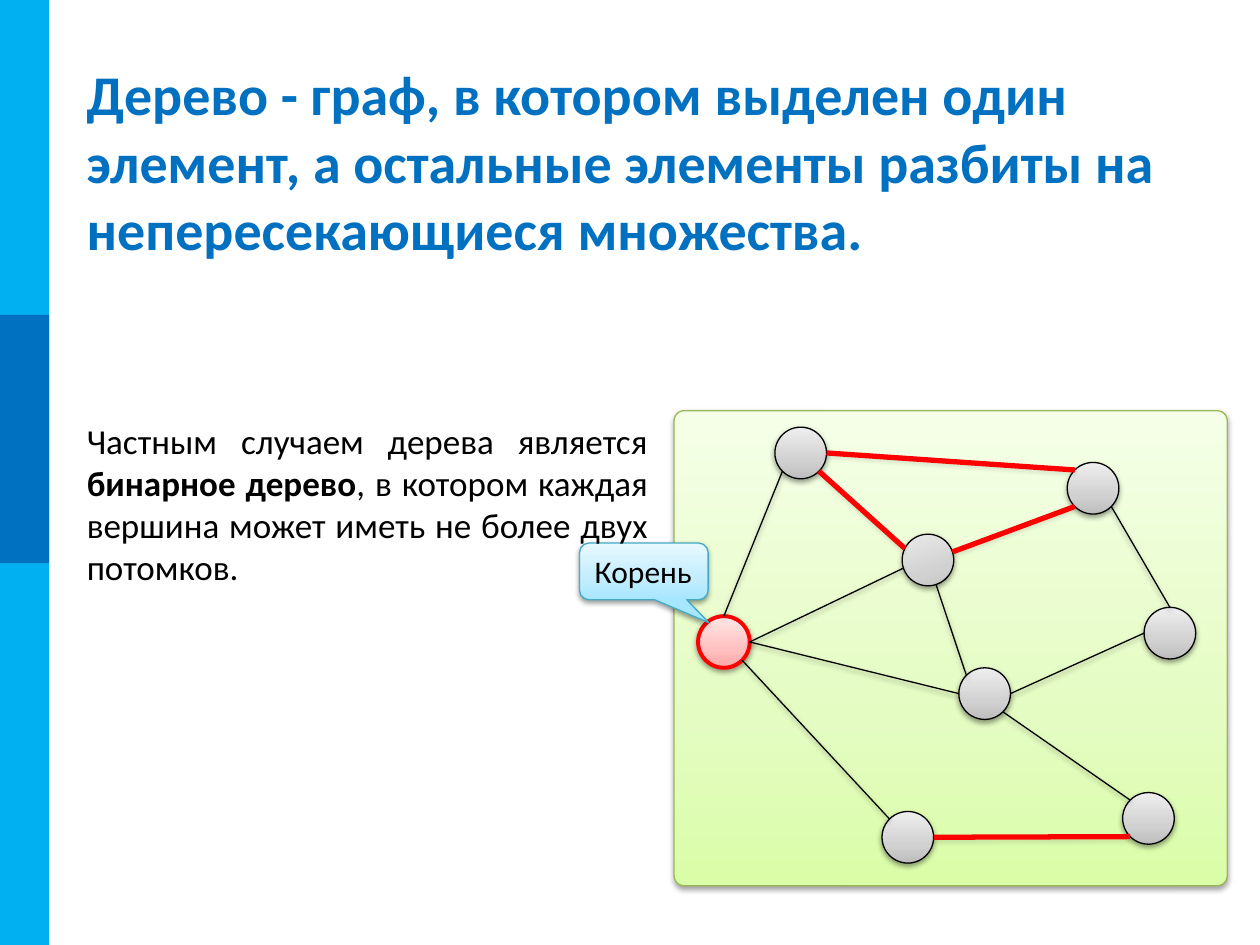
from math import cos, radians, sin

from lxml import etree
from pptx import Presentation
from pptx.dml.color import RGBColor
from pptx.enum.shapes import MSO_CONNECTOR, MSO_SHAPE
from pptx.enum.text import MSO_ANCHOR, MSO_AUTO_SIZE, PP_ALIGN
from pptx.oxml.ns import qn
from pptx.util import Inches, Pt

RECTANGLE, ROUNDED = MSO_SHAPE.RECTANGLE, MSO_SHAPE.ROUNDED_RECTANGLE
CIRCLE, CALLOUT = MSO_SHAPE.OVAL, MSO_SHAPE.ROUNDED_RECTANGULAR_CALLOUT
STRAIGHT = MSO_CONNECTOR.STRAIGHT
TOP, MIDDLE = MSO_ANCHOR.TOP, MSO_ANCHOR.MIDDLE
LEFT, JUSTIFY = PP_ALIGN.LEFT, PP_ALIGN.JUSTIFY
GROW, FIXED = MSO_AUTO_SIZE.SHAPE_TO_FIT_TEXT, MSO_AUTO_SIZE.NONE

# Content: each text is a list of (words, bold)
TITLE = [("Дерево - граф, в котором выделен один элемент, а остальные элементы "
          "разбиты на непересекающиеся множества.", True)]
BODY = [("Частным случаем дерева является ", False),
        ("бинарное дерево", True),
        (", в котором каждая вершина может иметь не более двух потомков.", False)]
ROOT_LABEL = [("Корень", False)]

# Side bars: top, height, colour
BARS = [(0, 7.5, "00B0F0"), (2.5, 1.97, "0070C0")]

# Gradients from bottom to top
GREEN = ("DAFDA7", "E4FCC2", "F5FFE7")
GREY = ("BDBDBD", "D1D1D1", "EEEEEE")
PINK = ("FFA6A5", "FFC0BF", "FFE7E7")
BLUE = ("A7E6FF", "C1EDFF", "E7F8FF")
STOPS = (0, 35, 100)

# Graph nodes: left, top, rotation
DIAMETER = 0.41
NODES = {
    "upper left": (6.15, 3.39, 0),
    "upper right": (8.47, 3.67, 0),
    "centre": (7.16, 4.24, -18.3),
    "lower centre": (7.61, 5.3, 0),
    "bottom": (7, 6.44, 0),
    "right": (9.08, 4.82, 0),
    "lower right": (8.91, 6.29, 0),
    "root": (5.54, 4.89, 0),
}
# Points on a circle, in degrees clockwise from its right
E, SE, S, SW, W, NW, N = 0, 45, 90, 135, 180, 225, 270
EDGES = [
    ("root", N, "upper left", SW),
    ("root", SE, "bottom", NW),
    ("right", W, "lower centre", E),
    ("lower right", NW, "lower centre", SE),
    ("lower centre", W, "root", E),
    ("root", E, "centre", W),
    ("right", N, "upper right", SE),
    ("lower centre", NW, "centre", S),
]
RED_EDGES = [
    ("centre", NW, "upper left", SE),
    ("upper right", SW, "centre", E),
    ("upper left", E, "upper right", NW),
    ("bottom", E, "lower right", SW),
]

deck = Presentation()
deck.slide_width, deck.slide_height = Inches(10), Inches(7.5)
page = deck.slides.add_slide(deck.slide_layouts[6])


def color(value):
    return RGBColor.from_string(value)


def add_effects(item, shadow):
    """Give a shape or connector a soft shadow, or none at all."""
    properties = item._element.spPr
    effects = properties.find(qn("a:effectLst"))
    if effects is None:
        effects = etree.SubElement(properties, qn("a:effectLst"))
    if shadow:
        outer = etree.SubElement(effects, qn("a:outerShdw"), blurRad=str(Pt(3.1)),
                                 dist=str(Pt(1.6)), dir="5400000", rotWithShape="0")
        black = etree.SubElement(outer, qn("a:srgbClr"), val="000000")
        etree.SubElement(black, qn("a:alpha"), val="38000")


def add_shape(kind, left, top, width, height, fill, line=None, weight=0.75):
    shape = page.shapes.add_shape(kind, *map(Inches, (left, top, width, height)))
    shape.shadow.inherit = False
    if isinstance(fill, str):
        shape.fill.solid()
        shape.fill.fore_color.rgb = color(fill)
    else:
        shape.fill.gradient()
        shape.fill.gradient_angle = 90
        stops = shape._element.spPr.find(qn("a:gradFill")).find(qn("a:gsLst"))
        for stop in list(stops):
            stops.remove(stop)
        for position, value in zip(STOPS, fill):
            stop = etree.SubElement(stops, qn("a:gs"), pos=str(position * 1000))
            etree.SubElement(stop, qn("a:srgbClr"), val=value)
    if line:
        shape.line.color.rgb = color(line)
        shape.line.width = Pt(weight)
        add_effects(shape, True)
    else:
        shape.line.fill.background()
    return shape


def write(box, spans, size, hue="000000", align=LEFT, anchor=TOP, wrap=True, fit=FIXED):
    frame = box.text_frame
    frame.word_wrap, frame.auto_size, frame.vertical_anchor = wrap, fit, anchor
    para = frame.paragraphs[0]
    para.alignment = align
    for words, bold in spans:
        span = para.add_run()
        span.text = words
        span.font.name, span.font.size, span.font.bold = "Calibri", Pt(size), bold
        span.font.color.rgb = color(hue)


def add_text(left, top, width, height, spans, **style):
    box = page.shapes.add_textbox(*map(Inches, (left, top, width, height)))
    write(box, spans, **style)


def rim_point(name, angle):
    left, top, rotation = NODES[name]
    radius = DIAMETER / 2
    turn = radians(angle + rotation)
    return (Inches(left + radius + radius * cos(turn)),
            Inches(top + radius + radius * sin(turn)))


def add_edges(edges, hue, weight, shadow):
    for start, start_angle, end, end_angle in edges:
        edge = page.shapes.add_connector(
            STRAIGHT, *rim_point(start, start_angle), *rim_point(end, end_angle))
        edge.line.color.rgb = color(hue)
        edge.line.width = Pt(weight)
        add_effects(edge, shadow)


# Side bars and title
for top, height, hue in BARS:
    add_shape(RECTANGLE, 0, top, 0.39, height, hue)
add_text(0.59, 0.3, 9.06, 1.95, TITLE, size=32, hue="0070C0", anchor=MIDDLE)

# Graph panel and nodes
panel = add_shape(ROUNDED, 5.35, 3.26, 4.39, 3.77, GREEN, "98B955")
panel.adjustments[0] = 0.021
for name, (left, top, rotation) in NODES.items():
    look = (PINK, "FF0000", 2.25) if name == "root" else (GREY, "000000")
    node = add_shape(CIRCLE, left, top, DIAMETER, DIAMETER, *look)
    node.rotation = rotation

# Edges, with the red ones laid over shadowed black lines
add_edges(EDGES + RED_EDGES, "000000", 0.75, True)
add_edges(RED_EDGES, "FF0000", 3, False)

# Root callout
callout = add_shape(CALLOUT, 4.6, 4.31, 1.02, 0.45, BLUE, "46AAC5")
for index, value in enumerate((0.506, 0.905, 0.167)):
    callout.adjustments[index] = value
write(callout, ROOT_LABEL, size=18, anchor=MIDDLE, wrap=False, fit=GROW)

# Explanation
add_text(0.59, 3.28, 4.65, 1.45, BODY, size=20, align=JUSTIFY, fit=GROW)

deck.save("out.pptx")
